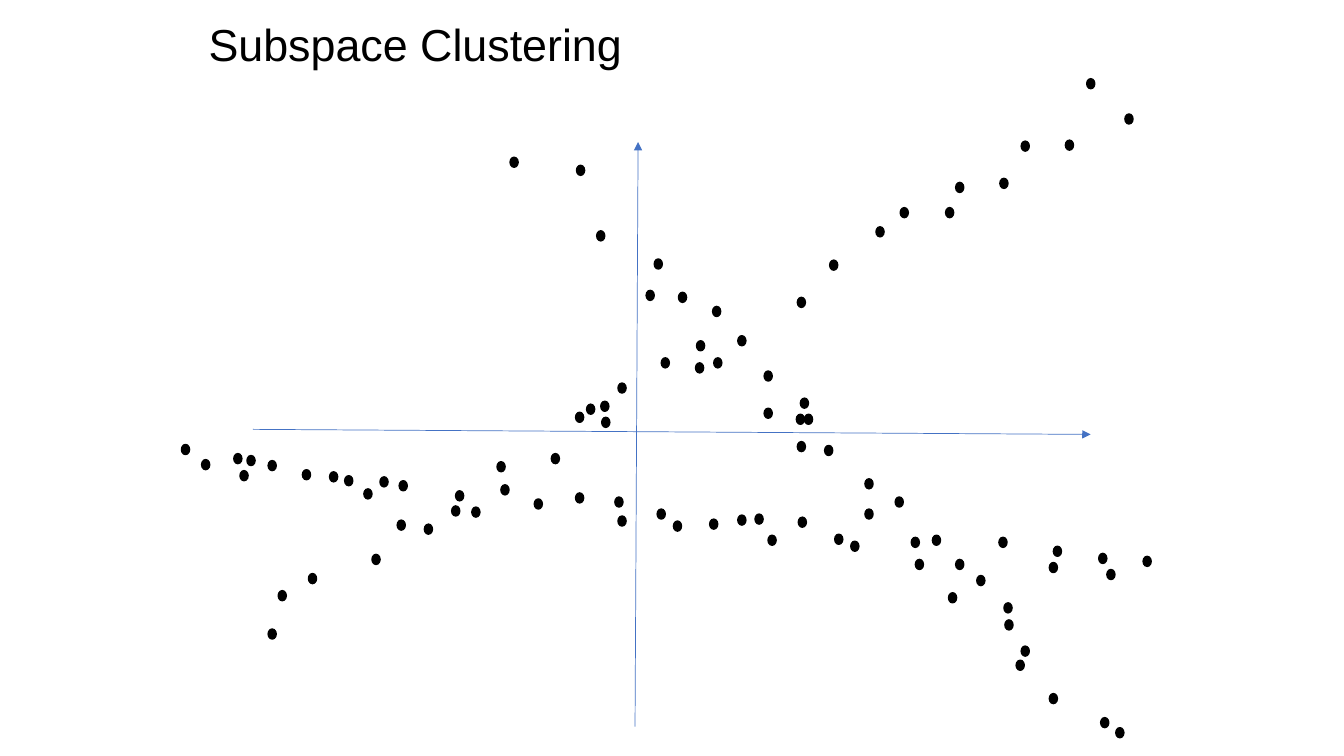
from lxml import etree
from pptx import Presentation
from pptx.dml.color import RGBColor
from pptx.enum.shapes import MSO_CONNECTOR, MSO_SHAPE
from pptx.enum.text import MSO_ANCHOR, MSO_AUTO_SIZE, PP_ALIGN
from pptx.oxml.ns import qn
from pptx.util import Pt

COLORS = {"ink": "000000", "axis": "4472C4"}
DOT_W, DOT_H = 5.8, 7.2

# Left and top of each dot, in points, grouped by the line the cluster follows
CLUSTERS = {
    "falling": [
        (364.3, 112.3), (411.8, 118.1), (426.2, 164.9), (467.3, 185), (461.5, 207.4),
        (484.6, 208.8), (509, 218.9), (497.5, 243.4), (509.8, 255.6), (568.8, 295.9),
        (571.7, 284.4), (545.8, 291.6), (545.8, 265), (569.5, 315.4), (574.6, 295.9),
        (639.4, 355), (589, 318.2), (617.8, 363.6), (617.8, 342), (650.9, 383.8),
        (653.8, 399.6), (682.6, 399.6), (677.5, 423.4), (717.1, 430.6), (697.7, 411.1),
        (717.8, 442.8), (725.8, 471.6), (729.4, 461.5), (749.5, 495.4), (786.2, 512.6),
        (797, 519.8),
    ],
    "flat": [
        (176.4, 325.4), (129.6, 317.5), (144, 328.3), (167, 324), (171.4, 336.2),
        (191.5, 329), (216, 335.5), (235.4, 337), (246.2, 339.8), (271.4, 340.6),
        (259.9, 349.2), (285.1, 343.4), (441.4, 368.6), (481, 372.2), (325.4, 350.6),
        (337, 362.2), (381.6, 356.4), (469.4, 363.6), (607.7, 386.6), (790.6, 406.8),
        (752.4, 390.2), (548.6, 382.3), (570.2, 369.4), (666, 382.3), (527, 367.9),
        (411.1, 352.1), (784.8, 395.3), (439.2, 355), (596.2, 381.6), (749.5, 401.8),
        (816.5, 397.4), (713.5, 383.8), (357.8, 346.3), (506.9, 370.8), (539.3, 367.2),
    ],
    "rising": [
        (191.5, 449.3), (220.3, 409.7), (198.7, 421.9), (265.7, 396), (303.1, 374.4),
        (355, 329.8), (283.7, 371.5), (419, 288.7), (322.6, 361.4), (429.8, 298.1),
        (429.1, 286.6), (393.8, 324), (441.4, 273.6), (411.1, 294.5), (527, 239.8),
        (803.5, 81.4), (496.8, 259.2), (472.3, 255.6), (592.6, 185.8), (569.5, 212.4),
        (776.2, 56.2), (675.4, 148.3), (729.4, 100.8), (625.7, 162), (643, 148.3),
        (682.6, 130.3), (714.2, 127.4), (761, 100.1),
    ],
}

prs = Presentation()
prs.slide_width, prs.slide_height = Pt(960), Pt(540)
s = prs.slides.add_slide(prs.slide_layouts[5])

title = s.shapes.title
title.left, title.top, title.width, title.height = Pt(141.8), Pt(7.9), Pt(661), Pt(46.1)
tf = title.text_frame
tf.word_wrap = True
tf.auto_size = MSO_AUTO_SIZE.SHAPE_TO_FIT_TEXT
tf.vertical_anchor = MSO_ANCHOR.MIDDLE
p = tf.paragraphs[0]
p.alignment = PP_ALIGN.LEFT
r = p.add_run()
r.text = "Subspace Clustering"
r.font.name = "Arial"
r.font.size = Pt(32)
r.font.color.rgb = RGBColor.from_string(COLORS["ink"])

axes = [(453.6, 519.1, 455.8, 101.5), (180.7, 306.7, 779, 310.3)]
for x1, y1, x2, y2 in axes:
    axis = s.shapes.add_connector(MSO_CONNECTOR.STRAIGHT, Pt(x1), Pt(y1), Pt(x2), Pt(y2))
    axis.line.color.rgb = RGBColor.from_string(COLORS["axis"])
    axis.line.width = Pt(0.5)
    sp_pr = axis._element.spPr
    etree.SubElement(sp_pr.find(qn("a:ln")), qn("a:tailEnd"), type="triangle")
    etree.SubElement(sp_pr, qn("a:effectLst"))

for cluster, dots in CLUSTERS.items():
    for i, (x, y) in enumerate(dots, 1):
        dot = s.shapes.add_shape(MSO_SHAPE.OVAL, Pt(x), Pt(y), Pt(DOT_W), Pt(DOT_H))
        dot.name = f"Dot {cluster} {i}"
        dot.shadow.inherit = False
        dot.fill.solid()
        dot.fill.fore_color.rgb = RGBColor.from_string(COLORS["ink"])
        dot.line.color.rgb = RGBColor.from_string(COLORS["ink"])
        dot.line.width = Pt(1)

prs.save("out.pptx")
